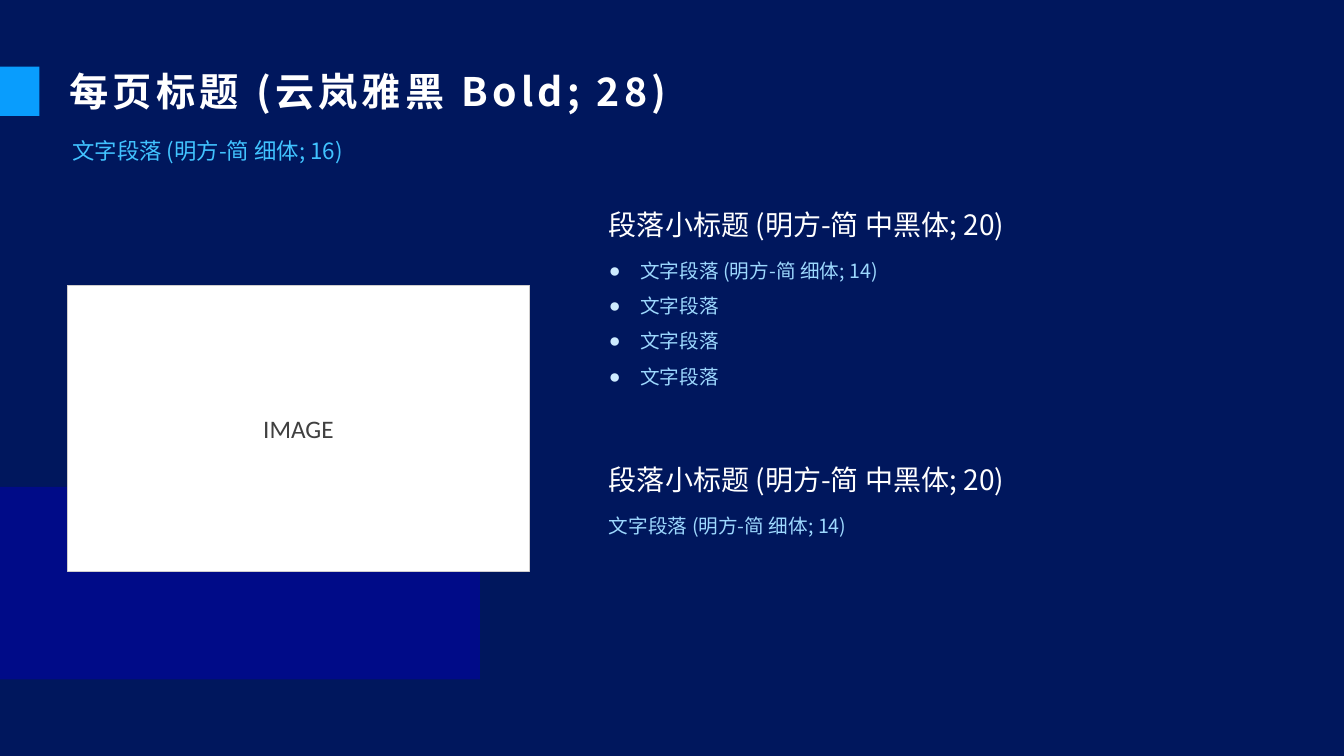
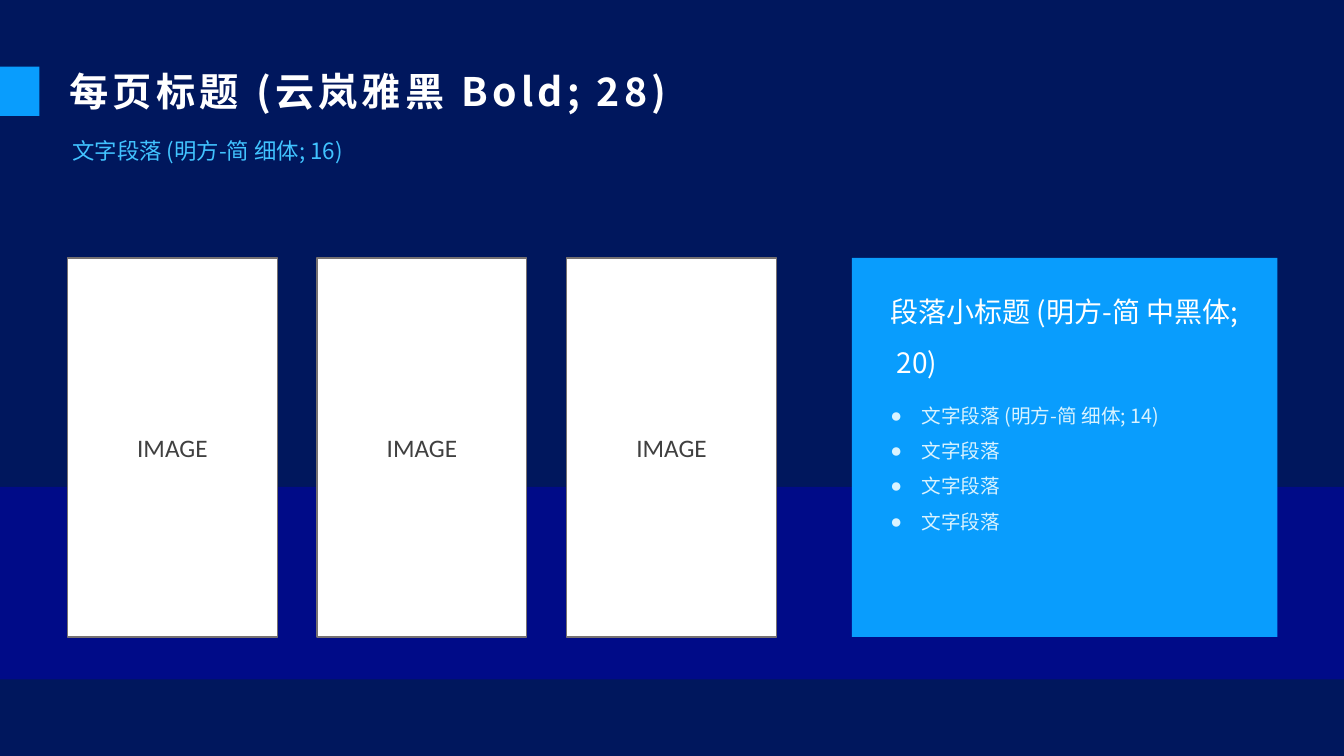
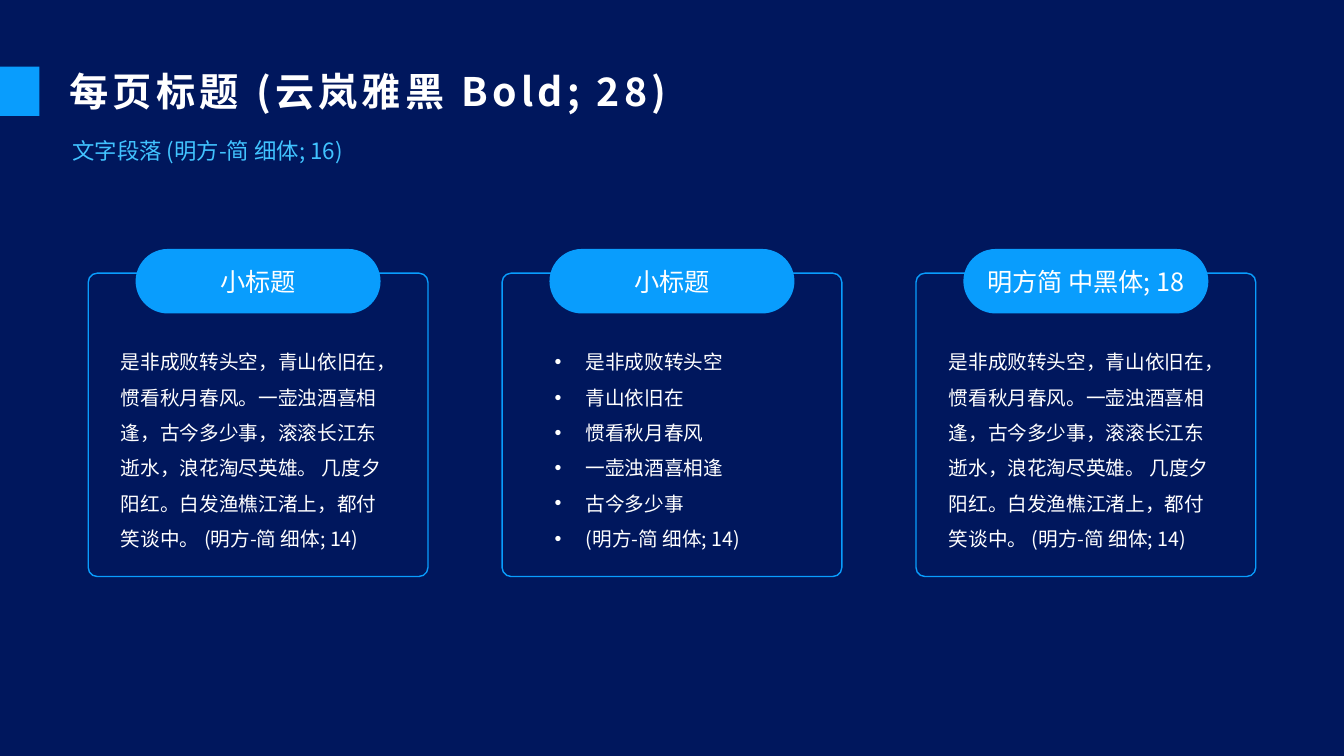
from dataclasses import dataclass

from lxml.etree import SubElement
from pptx import Presentation
from pptx.dml.color import RGBColor
from pptx.enum.shapes import MSO_SHAPE as SHAPE
from pptx.enum.text import MSO_ANCHOR as ANCHOR, MSO_AUTO_SIZE as AUTO_SIZE, PP_ALIGN as ALIGN
from pptx.oxml.ns import qn
from pptx.util import Inches, Pt


@dataclass(frozen=True)
class Theme:
    background: str = "00175D"
    band: str = "0000B4"
    accent: str = "099DFD"
    subtitle: str = "41C3FF"
    body: str = "9DD8FE"
    body_on_accent: str = "D9F3FF"
    bullet: str = "CEEBFF"
    white: str = "FFFFFF"
    image_text: str = "404040"
    light_border: str = "D0CECE"
    dark_border: str = "767171"
    font: str = "Noto Sans CJK SC"
    image_font: str = "Calibri"
    title_size: int = 28
    heading_size: int = 20
    label_size: int = 18
    subtitle_size: int = 16
    body_size: int = 14


THEME = Theme()
SLIDE_WIDTH, SLIDE_HEIGHT = 13.33, 7.5
BAND_TOP, BAND_HEIGHT = 4.83, 1.91
MARGIN = 0.67

TITLE = "每页标题 (云岚雅黑 Bold; 28)"
SUBTITLE = "文字段落 (明方-简 细体; 16)"
HEADING = "段落小标题 (明方-简 中黑体; 20)"
PARAGRAPH = "文字段落 (明方-简 细体; 14)"
BULLETS = [PARAGRAPH, "文字段落", "文字段落", "文字段落"]
POEM = (
    "是非成败转头空，青山依旧在，惯看秋月春风。一壶浊酒喜相逢，古今多少事，"
    "滚滚长江东逝水，浪花淘尽英雄。 几度夕阳红。白发渔樵江渚上，都付笑谈中。 "
    "(明方-简 细体; 14)"
)
POEM_LINES = [
    "是非成败转头空", "青山依旧在", "惯看秋月春风",
    "一壶浊酒喜相逢", "古今多少事", "(明方-简 细体; 14)",
]
# label, text, bullet, text width
CARDS = [
    ("小标题", [POEM], None, 2.82),
    ("小标题", POEM_LINES, "•", 2.43),
    ("明方简 中黑体; 18", [POEM], None, 2.82),
]


def rgb(value):
    return RGBColor.from_string(value)


def add_bullet(paragraph, character, color):
    properties = paragraph._p.get_or_add_pPr()
    indent = Inches(0.31)
    properties.set("marL", str(indent))
    properties.set("indent", str(-indent))
    if color:
        SubElement(SubElement(properties, qn("a:buClr")), qn("a:srgbClr"), val=color)
    SubElement(properties, qn("a:buFont"), typeface="Arial")
    SubElement(properties, qn("a:buChar"), char=character)


def write(shape, lines, *, size, color=THEME.white, font=THEME.font, bold=False, tracking=0,
          align=ALIGN.LEFT, anchor=ANCHOR.TOP, spacing=1.0, inset=0.05,
          bullet=None, bullet_color=None):
    frame = shape.text_frame
    frame.word_wrap = True
    frame.auto_size = AUTO_SIZE.NONE
    frame.vertical_anchor = anchor
    frame.margin_left = frame.margin_right = Inches(inset)
    frame.margin_top = frame.margin_bottom = Inches(inset)
    for index, line in enumerate(lines):
        paragraph = frame.add_paragraph() if index else frame.paragraphs[0]
        if bullet:
            add_bullet(paragraph, bullet, bullet_color)
        paragraph.alignment = align
        paragraph.line_spacing = spacing
        run = paragraph.add_run()
        run.text = line
        run.font.size = Pt(size)
        run.font.bold = bold
        run.font.name = font
        run.font.color.rgb = rgb(color)
        properties = run._r.get_or_add_rPr()
        SubElement(properties, qn("a:ea"), typeface=font)
        if tracking:
            properties.set("spc", str(tracking * 100))


def add_text(shapes, box, lines, **text_format):
    shape = shapes.add_textbox(*map(Inches, box))
    write(shape, lines, **{"size": THEME.body_size, "spacing": 1.5, **text_format})


def add_box(shapes, box, *, kind=SHAPE.RECTANGLE, fill=None, line=None, radius=None, opacity=None):
    shape = shapes.add_shape(kind, *map(Inches, box))
    shape.shadow.inherit = False
    if radius is not None:
        shape.adjustments[0] = radius
    if fill:
        shape.fill.solid()
        shape.fill.fore_color.rgb = rgb(fill)
    else:
        shape.fill.background()
    if line:
        shape.line.color.rgb = rgb(line)
        shape.line.width = Pt(1)
    else:
        shape.line.fill.background()
    if opacity is not None:
        color = shape.fill._xPr.find(qn("a:solidFill")).find(qn("a:srgbClr"))
        SubElement(color, qn("a:alpha"), val=str(opacity * 1000))
    return shape


def add_image_box(slide, box, border):
    shape = add_box(slide.shapes, box, fill=THEME.white, line=border)
    write(shape, ["IMAGE"], size=THEME.label_size, color=THEME.image_text,
          font=THEME.image_font, align=ALIGN.CENTER, anchor=ANCHOR.MIDDLE)


def add_band(slide, width):
    add_box(slide.shapes, (0, BAND_TOP, width, BAND_HEIGHT), fill=THEME.band, opacity=50)


def add_titled_slide(presentation):
    slide = presentation.slides.add_slide(presentation.slide_layouts[5])
    title = slide.shapes.title
    title.left, title.top, title.width, title.height = map(Inches, (MARGIN, 0.57, 11.79, 0.66))
    write(title, [TITLE], size=THEME.title_size, bold=True, tracking=3,
          anchor=ANCHOR.MIDDLE, inset=0.02)
    add_box(slide.shapes, (0, 0.66, 0.39, 0.49), fill=THEME.accent)
    add_text(slide.shapes, (MARGIN, 1.18, 11.79, 0.47), [SUBTITLE],
             size=THEME.subtitle_size, color=THEME.subtitle)
    return slide


def build_image_and_text(presentation):
    slide = add_titled_slide(presentation)
    add_band(slide, 4.76)
    add_image_box(slide, (MARGIN, 2.83, 4.58, 2.84), THEME.light_border)
    left, width, heading_height = 5.99, 4.9, 0.56
    sections = [(1.84, BULLETS, "●", 1.48), (4.37, [PARAGRAPH], None, 0.42)]
    for top, lines, bullet, height in sections:
        add_text(slide.shapes, (left, top, width, heading_height), [HEADING],
                 size=THEME.heading_size)
        add_text(slide.shapes, (left, top + heading_height, width, height), lines,
                 color=THEME.body, bullet=bullet, bullet_color=THEME.bullet)


def build_image_row(presentation):
    slide = add_titled_slide(presentation)
    add_band(slide, SLIDE_WIDTH)
    top, height = 2.56, 3.76
    pitch = (5.62 - MARGIN) / 2
    for column in range(3):
        add_image_box(slide, (MARGIN + column * pitch, top, 2.08, height), THEME.dark_border)
    add_box(slide.shapes, (8.45, top, 4.22, height), fill=THEME.accent)
    add_text(slide.shapes, (8.78, 2.71, 3.55, 1.07), [HEADING], size=THEME.heading_size)
    add_text(slide.shapes, (8.78, 3.84, 3.55, 1.48), BULLETS,
             color=THEME.body_on_accent, bullet="●")


def build_cards(presentation):
    slide = add_titled_slide(presentation)
    pitch = (9.09 - 0.88) / 2
    for column, (label, lines, bullet, text_width) in enumerate(CARDS):
        center = SLIDE_WIDTH / 2 + (column - 1) * pitch

        def centered(top, width, height):
            return center - width / 2, top, width, height

        shapes = slide.shapes.add_group_shape().shapes
        add_box(shapes, centered(2.71, 3.37, 3.01), kind=SHAPE.ROUNDED_RECTANGLE,
                line=THEME.accent, radius=0.03)
        pill = add_box(shapes, centered(2.47, 2.43, 0.64), kind=SHAPE.ROUNDED_RECTANGLE,
                       fill=THEME.accent, radius=0.5)
        write(pill, [label], size=THEME.label_size, align=ALIGN.CENTER, anchor=ANCHOR.MIDDLE)
        add_text(shapes, centered(3.31, text_width, 2.24), lines, bullet=bullet)


def main():
    presentation = Presentation()
    presentation.slide_width = Inches(SLIDE_WIDTH)
    presentation.slide_height = Inches(SLIDE_HEIGHT)
    background = presentation.slide_master.background.fill
    background.solid()
    background.fore_color.rgb = rgb(THEME.background)
    build_image_and_text(presentation)
    build_image_row(presentation)
    build_cards(presentation)
    presentation.save("out.pptx")


if __name__ == "__main__":
    main()
